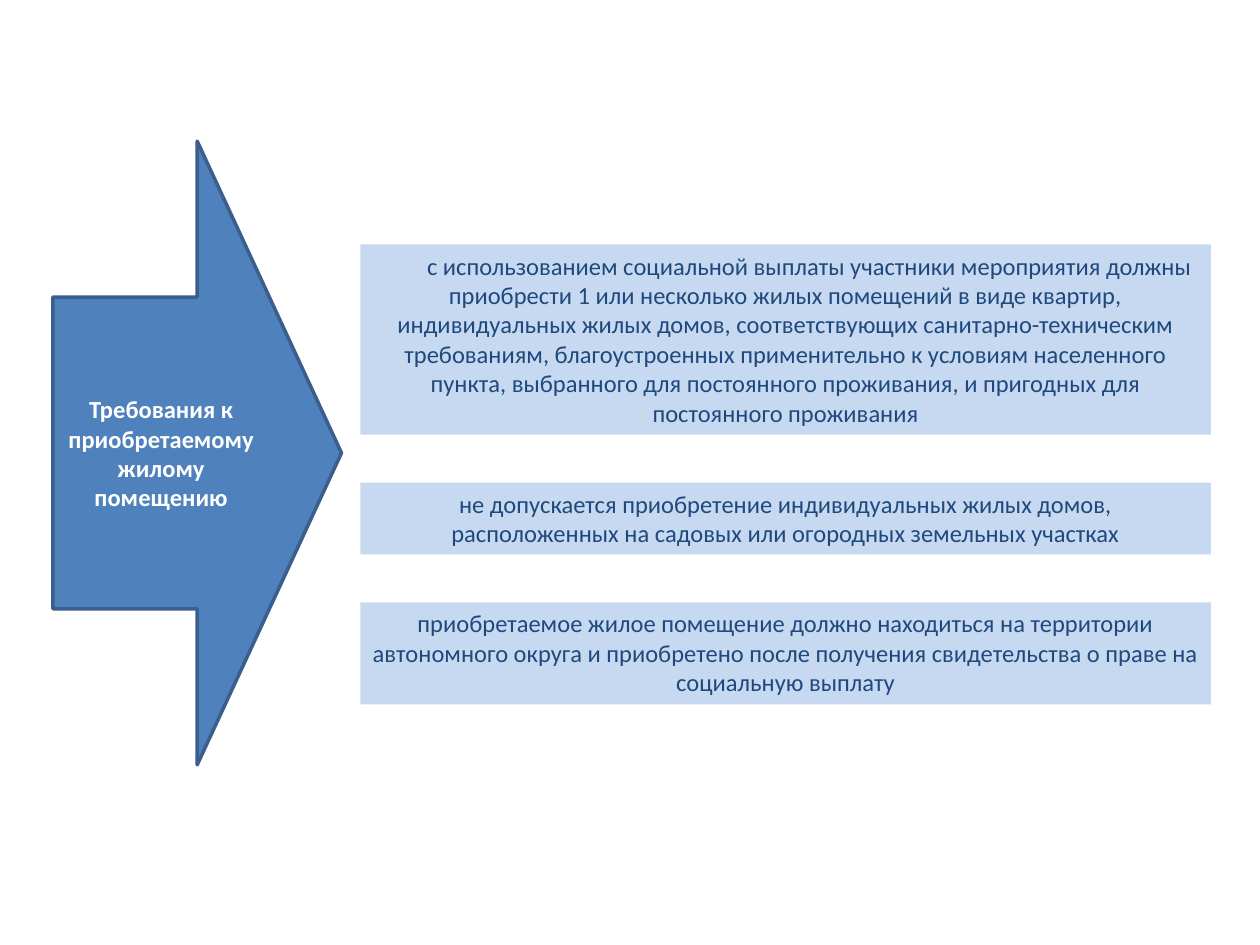
from pptx import Presentation
from pptx.dml.color import RGBColor
from pptx.enum.shapes import MSO_SHAPE
from pptx.enum.text import MSO_ANCHOR, MSO_AUTO_SIZE, PP_ALIGN
from pptx.util import Inches, Pt

COLUMNS, ROWS = 100, 75
GAP = 3.8
REQUIREMENTS = [
    (15.1, 0.38, "с использованием социальной выплаты участники мероприятия должны "
     "приобрести 1 или несколько жилых помещений в виде квартир, индивидуальных "
     "жилых домов, соответствующих санитарно-техническим требованиям, "
     "благоустроенных применительно к условиям населенного пункта, выбранного "
     "для постоянного проживания, и пригодных для постоянного проживания"),
    (5.7, 0, "не допускается приобретение индивидуальных жилых домов, "
     "расположенных на садовых или огородных земельных участках"),
    (8.1, 0, "приобретаемое жилое помещение должно находиться на территории "
     "автономного округа и приобретено после получения свидетельства о праве "
     "на социальную выплату"),
]


def color(value):
    """Turn a hex string into a colour."""
    return RGBColor.from_string(value)


class SlideBuilder:
    """Hold the style and the current slide, and add its elements."""

    font = {"name": "Calibri", "size": Pt(14)}

    def __init__(self, presentation):
        """Add a blank slide and measure its grid."""
        self.slide = presentation.slides.add_slide(presentation.slide_layouts[6])
        self.column = presentation.slide_width / COLUMNS
        self.row = presentation.slide_height / ROWS

    def block(self, kind, left, top, width, height, fill):
        """Add a filled preset shape placed on the grid."""
        shape = self.slide.shapes.add_shape(
            kind, round(left * self.column), round(top * self.row),
            round(width * self.column), round(height * self.row))
        shape.shadow.inherit = False
        shape.fill.solid()
        shape.fill.fore_color.rgb = color(fill)
        return shape

    def label(self, shape, text, text_color, frame_format, bold=False, indent=0):
        """Put one centred paragraph into a shape."""
        frame = shape.text_frame
        for name, value in {"word_wrap": True, **frame_format}.items():
            setattr(frame, name, value)
        paragraph = frame.paragraphs[0]
        paragraph.alignment = PP_ALIGN.CENTER
        if indent:
            paragraph._p.get_or_add_pPr().set("indent", str(Inches(indent)))
        run = paragraph.add_run()
        run.text = text
        for name, value in {**self.font, "bold": bold}.items():
            setattr(run.font, name, value)
        run.font.color.rgb = color(text_color)

    def arrow(self, left, top, width, height, text):
        """Add the outlined arrow that names the topic."""
        shape = self.block(MSO_SHAPE.RIGHT_ARROW, left, top, width, height, "4F81BD")
        shape.line.color.rgb = color("3A5F8C")
        shape.line.width = Pt(2)
        self.label(shape, text, "FFFFFF",
                   {"vertical_anchor": MSO_ANCHOR.MIDDLE}, bold=True)

    def requirement(self, left, top, width, height, text, indent):
        """Add one pale box holding a requirement."""
        shape = self.block(MSO_SHAPE.RECTANGLE, left, top, width, height, "C6D9F1")
        shape.line.fill.background()
        self.label(shape, text, "1F497D",
                   {"vertical_anchor": MSO_ANCHOR.TOP,
                    "auto_size": MSO_AUTO_SIZE.SHAPE_TO_FIT_TEXT}, indent=indent)


def main():
    """Build and save the slide."""
    presentation = Presentation()
    presentation.slide_width, presentation.slide_height = Inches(10), Inches(7.5)
    builder = SlideBuilder(presentation)
    builder.arrow(4.2, 11.2, 22.9, 49.5, "Требования к приобретаемому жилому помещению")
    top = 19.4
    for height, indent, text in REQUIREMENTS:
        builder.requirement(28.6, top, 67.5, height, text, indent)
        top += height + GAP
    presentation.save("out.pptx")


if __name__ == "__main__":
    main()
